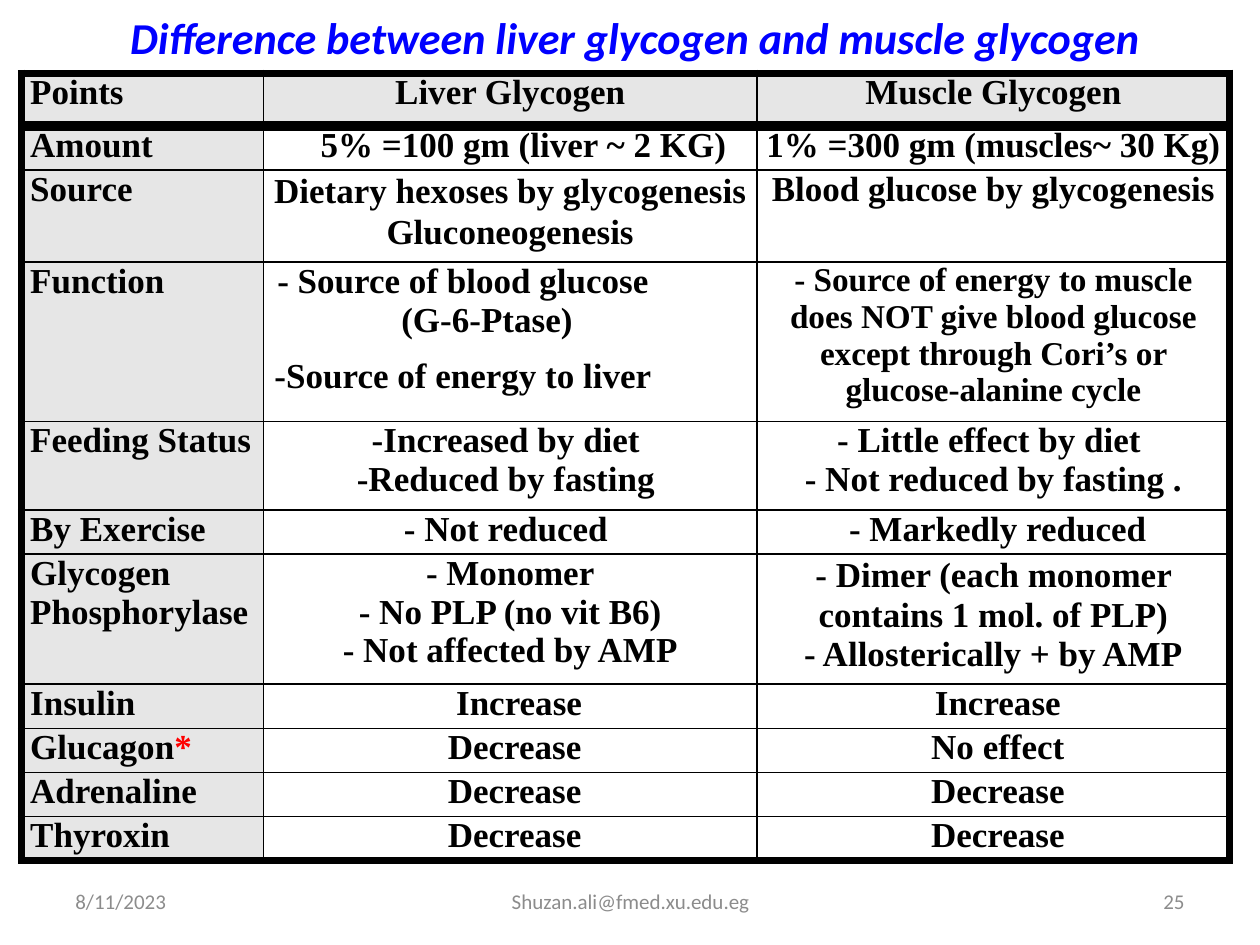
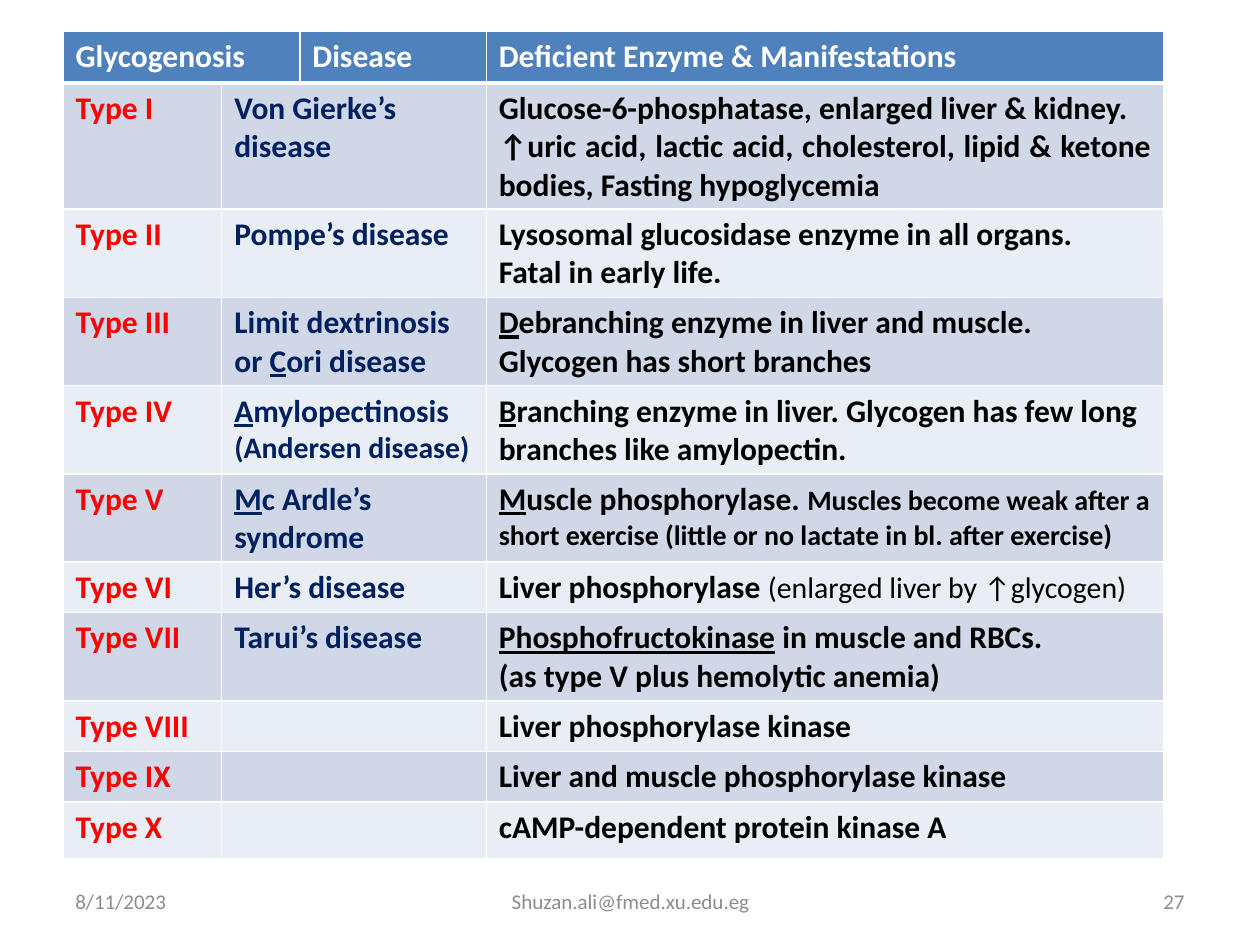
"""Build two slides of comparison tables about glycogen."""
from dataclasses import dataclass

from lxml.etree import SubElement
from pptx import Presentation
from pptx.dml.color import RGBColor
from pptx.enum.text import MSO_ANCHOR, MSO_AUTO_SIZE, PP_ALIGN
from pptx.oxml.ns import qn
from pptx.util import Inches, Pt

BLACK = RGBColor(0, 0, 0)
WHITE = RGBColor(255, 255, 255)
RED = RGBColor(255, 0, 0)
BLUE = RGBColor(0, 0, 255)
NAVY = RGBColor(0x00, 0x20, 0x60)
GRAY = RGBColor(0x8C, 0x8C, 0x8C)
PALE_GRAY = RGBColor(0xE6, 0xE6, 0xE6)
HEADER_BLUE = RGBColor(0x4F, 0x81, 0xBD)
BAND_DARK = RGBColor(0xD0, 0xD8, 0xE8)
BAND_LIGHT = RGBColor(0xE9, 0xED, 0xF4)

SANS = "Calibri"
SERIF = "Times New Roman"
DATE = "8/11/2023"
CONTACT = "Shuzan.ali@fmed.xu.edu.eg"


@dataclass
class Para:
    runs: object
    left: float = 0
    first: float = 0
    after: float = 0
    spacing: float = 0
    align: object = None
    size: float = 0


@dataclass
class Run:
    text: str
    size: float = 0
    bold: object = None
    underline: object = None
    color: object = None


def under(text):
    return Run(text, underline=True)


class Deck:
    def __init__(self):
        self.prs = Presentation()
        self.prs.slide_width, self.prs.slide_height = Inches(10), Inches(7.5)
        self.s = None

    def slide(self, number, title=None):
        self.s = self.prs.slides.add_slide(self.prs.slide_layouts[5 if title else 6])
        if title:
            self.title(title)
        self.footer(DATE, 0.5, 2.33, PP_ALIGN.LEFT)
        self.footer(str(number), 7.17, 2.33, PP_ALIGN.RIGHT)
        self.footer(CONTACT, 3.42, 3.17, PP_ALIGN.CENTER)

    def font(self, font, name, size, color, bold=False):
        font.name, font.size, font.bold = name, Pt(size), bold
        font.color.rgb = color

    def title(self, text):
        sp = self.s.shapes.title
        sp.left, sp.top, sp.width, sp.height = Inches(0.5), 0, Inches(9.08), Inches(0.58)
        tf = sp.text_frame
        tf.text = text
        tf.auto_size = MSO_AUTO_SIZE.NONE
        tf.vertical_anchor = MSO_ANCHOR.MIDDLE
        p = tf.paragraphs[0]
        p.alignment = PP_ALIGN.CENTER
        self.font(p.font, SANS, 25.2, BLUE, True)
        p.font.italic = True

    def footer(self, text, left, width, align):
        sp = self.s.shapes.add_textbox(Inches(left), Inches(6.95), Inches(width), Inches(0.4))
        tf = sp.text_frame
        tf.word_wrap = True
        tf.vertical_anchor = MSO_ANCHOR.MIDDLE
        p = tf.paragraphs[0]
        p.text, p.alignment = text, align
        self.font(p.font, SANS, 12, GRAY)

    def table(self, left, top, cols, rows):
        sp = self.s.shapes.add_table(len(rows), len(cols), Inches(left), Inches(top),
                                     Inches(sum(cols)), Inches(sum(rows)))
        tbl = sp.table
        tbl.first_row = tbl.horz_banding = False
        for col, width in zip(tbl.columns, cols):
            col.width = Inches(width)
        for row, height in zip(tbl.rows, rows):
            row.height = Inches(height)
        return tbl

    def borders(self, tbl, color, outer, header, inner):
        last_row, last_col = len(tbl.rows) - 1, len(tbl.columns) - 1
        for r in range(last_row + 1):
            top = {0: outer, 1: header}.get(r, inner)
            bottom = {0: header, last_row: outer}.get(r, inner)
            for c in range(last_col + 1):
                widths = {"a:lnL": inner if c else outer,
                          "a:lnR": outer if c == last_col else inner,
                          "a:lnT": top, "a:lnB": bottom}
                tc_pr = tbl.cell(r, c)._tc.get_or_add_tcPr()
                for tag, width in widths.items():
                    ln = SubElement(tc_pr, qn(tag), w=str(Pt(width)))
                    fill = SubElement(ln, qn("a:solidFill"))
                    SubElement(fill, qn("a:srgbClr"), val=str(color))

    def cell(self, cell, content, name, size, color, fill=None, align=PP_ALIGN.LEFT):
        if fill is None:
            cell.fill.background()
        else:
            cell.fill.solid()
            cell.fill.fore_color.rgb = fill
        paras = content if isinstance(content, list) else [content]
        tf = cell.text_frame
        for i, para in enumerate(paras):
            para = para if isinstance(para, Para) else Para(para)
            p = tf.add_paragraph() if i else tf.paragraphs[0]
            p.alignment = para.align or align
            self.font(p.font, name, para.size or size, color, True)
            if para.left:
                p_pr = p._p.get_or_add_pPr()
                p_pr.set("marL", str(Inches(para.left)))
                p_pr.set("indent", str(Inches(para.first)))
            if para.after:
                p.space_after = Pt(para.after)
            if para.spacing:
                p.line_spacing = para.spacing
            runs = para.runs if isinstance(para.runs, tuple) else (para.runs,)
            for run in filter(None, runs):
                self.run(p, run if isinstance(run, Run) else Run(run))

    def run(self, p, run):
        r = p.add_run()
        r.text = run.text
        if run.size:
            r.font.size = Pt(run.size)
        if run.bold is not None:
            r.font.bold = run.bold
        if run.underline:
            r.font.underline = True
        if run.color is not None:
            r.font.color.rgb = run.color


def effect(text):
    return Para(text, left=0.07)


def hanging(text):
    return Para(text, left=0.38, first=-0.38, after=10)


COMPARISON = [
    (0.42, "Points", "Liver Glycogen", "Muscle Glycogen"),
    (0.35, "Amount", Para("5% =100 gm (liver ~ 2 KG)", left=0.21),
     "1% =300 gm (muscles~ 30 Kg)"),
    (0.73, "Source",
     [Para("Dietary hexoses by glycogenesis", spacing=1.05),
      Para("Gluconeogenesis", spacing=1.05)],
     "Blood glucose by glycogenesis"),
    (0.75, "Function",
     [hanging("- Source of blood glucose (G-6-Ptase)"),
      hanging("-Source of energy to liver")],
     Para("- Source of energy to muscle does NOT give blood glucose except "
          "through Cori’s or glucose-alanine cycle", size=19)),
    (0.7, "Feeding Status", ["-Increased by diet ", "-Reduced by fasting "],
     ["- Little effect by diet ", "- Not reduced by fasting ."]),
    (0.35, "By Exercise", "- Not reduced ", " - Markedly reduced"),
    (0.78, ["Glycogen", "Phosphorylase"],
     ["- Monomer", "- No PLP (no vit B6)", "- Not affected by AMP"],
     [Para("- Dimer (each monomer contains 1 mol. of PLP)", spacing=1.05),
      "- Allosterically + by AMP"]),
    (0.35, "Insulin", Para("Increase", left=0.14), effect("Increase")),
    (0.35, ("Glucagon", Run("*", color=RED)), effect("Decrease"), effect("No effect")),
    (0.35, "Adrenaline", effect("Decrease"), effect("Decrease")),
    (0.35, "Thyroxin", effect("Decrease"), effect("Decrease")),
]
COMPARISON = [(h, Para(p) if isinstance(p, tuple) else p, a, b) for h, p, a, b in COMPARISON]

GLYCOGENOSES = [
    (0.99, "I", "Von Gierke’s disease",
     ["Glucose-6-phosphatase, enlarged liver & kidney.",
      Para("↑uric acid, lactic acid, cholesterol, lipid & ketone bodies, "
           "Fasting hypoglycemia", align=PP_ALIGN.JUSTIFY)]),
    (0.69, "II", "Pompe’s disease",
     ["Lysosomal glucosidase enzyme in all organs.", "Fatal in early life."]),
    (0.69, "III", ("Limit dextrinosis or ", under("C"), "ori disease"),
     [(under("D"), "ebranching enzyme in liver and muscle."),
      "Glycogen has short branches"]),
    (0.69, "IV", (under("A"), "mylopectinosis ", Run("(Andersen disease)", 17)),
     (under("B"), "ranching enzyme in liver. Glycogen has few long branches "
                  "like amylopectin.")),
    (0.69, "V", (under("M"), "c Ardle’s syndrome"),
     (under("M"), "uscle phosphorylase. ",
      Run("Muscles become weak after a short exercise (little or no lactate "
          "in bl. after exercise)", 16))),
    (0.4, "VI", "Her’s disease",
     ("Liver phosphorylase ", Run("(enlarged liver by ↑glycogen)", 17, False))),
    (0.69, "VII", "Tarui’s disease",
     [(under("Phosphofructokinase"), " in muscle and RBCs."),
      "(as type V plus hemolytic anemia)"]),
    (0.4, "VIII", "", "Liver phosphorylase kinase"),
    (0.4, "IX", "", "Liver and muscle phosphorylase kinase"),
    (0.45, "X", "", "cAMP-dependent protein kinase A"),
]


def comparison_slide(deck):
    deck.slide(25, "Difference between liver glycogen and muscle glycogen")
    tbl = deck.table(0.17, 0.58, [1.92, 3.92, 3.75], [row[0] for row in COMPARISON])
    deck.borders(tbl, BLACK, outer=4.5, header=6, inner=1)
    for r, (_, *contents) in enumerate(COMPARISON):
        for c, content in enumerate(contents):
            cell = tbl.cell(r, c)
            cell.margin_left = cell.margin_right = Inches(0.07)
            cell.margin_top = cell.margin_bottom = 0
            deck.cell(cell, content, SERIF, 20, BLACK,
                      PALE_GRAY if r == 0 or c == 0 else None,
                      PP_ALIGN.CENTER if c else PP_ALIGN.LEFT)
    tbl.cell(3, 1).margin_right = Inches(0.82)


def glycogenosis_slide(deck):
    deck.slide(27)
    heights = [0.41] + [row[0] for row in GLYCOGENOSES]
    tbl = deck.table(0.5, 0.25, [1.26, 0.62, 1.48, 5.38], heights)
    deck.borders(tbl, WHITE, outer=1, header=3, inner=1)
    tbl.cell(0, 0).merge(tbl.cell(0, 1))
    headers = {0: "Glycogenosis", 2: "Disease", 3: "Deficient Enzyme & Manifestations"}
    for c, text in headers.items():
        deck.cell(tbl.cell(0, c), text, SANS, 18, WHITE, HEADER_BLUE)
    for r, (_, numeral, disease, enzyme) in enumerate(GLYCOGENOSES, 1):
        tbl.cell(r, 1).merge(tbl.cell(r, 2))
        fill = BAND_DARK if r % 2 else BAND_LIGHT
        columns = [(0, f"Type {numeral}", RED), (1, disease, NAVY), (3, enzyme, BLACK)]
        for c, content, color in columns:
            deck.cell(tbl.cell(r, c), content, SANS, 18, color, fill)


def main():
    deck = Deck()
    comparison_slide(deck)
    glycogenosis_slide(deck)
    deck.prs.save("out.pptx")


if __name__ == "__main__":
    main()
